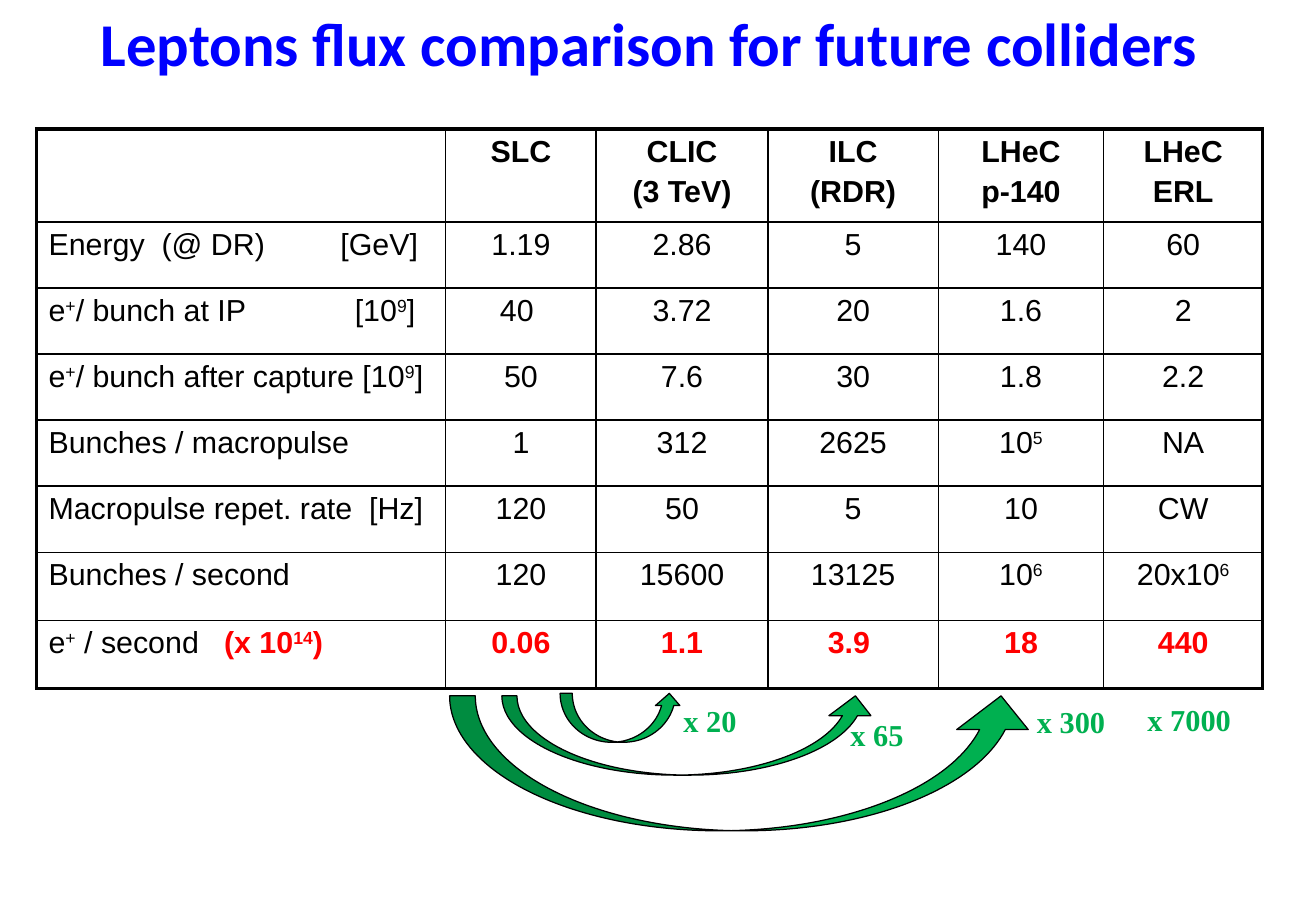
from dataclasses import dataclass
from lxml.etree import SubElement as Sub
from pptx import Presentation
from pptx.dml.color import RGBColor as RGB
from pptx.enum.shapes import MSO_SHAPE as Shape
from pptx.enum.text import MSO_ANCHOR as Anchor, PP_ALIGN as Align
from pptx.oxml.ns import qn
from pptx.util import Pt


@dataclass(frozen=True)
class Theme:
    ink: str = "000000"
    blue: str = "0000FF"
    red: str = "FF0000"
    green: str = "00B050"
    head: int = 36
    body: int = 18
    thin: float = 1
    thick: float = 2.25


THEME = Theme()
TITLE = dict(name="Calibri", size=Pt(THEME.head), bold=True, color=THEME.blue)
PLAIN = dict(name="Arial", size=Pt(THEME.body), bold=False, color=THEME.ink)
BOLD = {**PLAIN, "bold": True}
HOT = {**BOLD, "color": THEME.red}
NOTE = dict(name="Times New Roman", size=Pt(THEME.body), bold=True, color=THEME.green)

WIDTHS = [242.6, 89.2, 101.8, 101, 98, 94.3]
HEIGHTS = [55] + [39.2] * 5 + [40.3] * 2
ROWS = [
    ["", "SLC", "CLIC\n(3 TeV)", "ILC\n(RDR)", "LHeC\np-140", "LHeC\nERL"],
    ["Energy\t(@ DR)\t[GeV]", "1.19", "2.86", "5", "140", "60"],
    ["e^+^/ bunch at IP\t[10^9^]", "40 ", "3.72", "20", "1.6", "2"],
    ["e^+^/ bunch after capture [10^9^]", "50", "7.6", "30", "1.8", "2.2"],
    ["Bunches / macropulse", "1", "312", "2625", "10^5^", "NA"],
    ["Macropulse repet. rate\t[Hz]", "120", "50", "5", "10", "CW"],
    ["Bunches / second", "120", "15600", "13125", "10^6^", "20x10^6^"],
    ["e^+^ / second\t|(x 10^14^)", "|0.06", "|1.1", "|3.9 ", "|18", "|440"],
]
TABS = {1: [67, 173], 2: [181.5], 5: [190], 7: [104]}

GAINS = [
    ("x 20", (398, 412.5, 61, 29), (332, 411, 72, 29), (0.25, 0.5, 0.25)),
    ("x 300", (607.5, 413.5, 65.5, 50), (266.5, 412.5, 348, 80), (0.19, 0.53, 0.25)),
    ("x 7000", (673, 412, 74, 29), None, None),
    ("x 65", (497, 421, 64, 29), (297.5, 412.5, 222, 47), (0.19, 0.53, 0.25)),
]


def style(font, look):
    for key, value in look.items():
        if key == "color":
            font.color.rgb = RGB.from_string(value)
        else:
            setattr(font, key, value)


def write(para, text, look):
    for part, chunk in enumerate(text.split("|")):
        for index, piece in enumerate(chunk.split("^")):
            if piece:
                run = para.add_run()
                run.text = piece
                style(run.font, HOT if part else look)
                if index % 2:
                    run._r.get_or_add_rPr().set("baseline", "30000")


def set_tabs(para, stops):
    tabs = Sub(para._p.get_or_add_pPr(), qn("a:tabLst"))
    for stop in stops:
        Sub(tabs, qn("a:tab"), pos=str(Pt(stop)), algn="l")


def border(cell, row, col):
    props = cell._tc.get_or_add_tcPr()
    sides = {"L": col == 0, "R": col == len(WIDTHS) - 1,
             "T": row == 0, "B": row == len(HEIGHTS) - 1}
    for side, outer in sides.items():
        width = Pt(THEME.thick if outer else THEME.thin)
        line = Sub(props, qn(f"a:ln{side}"), w=str(width))
        Sub(Sub(line, qn("a:solidFill")), qn("a:srgbClr"), val=THEME.ink)


def fill_cell(cell, row, col):
    border(cell, row, col)
    cell.fill.background()
    cell.vertical_anchor = Anchor.TOP
    frame = cell.text_frame
    for index, text in enumerate(ROWS[row][col].split("\n")):
        para = frame.add_paragraph() if index else frame.paragraphs[0]
        para.alignment = Align.CENTER if col else Align.LEFT
        if index:
            para.space_before = Pt(3.5)
        if not col and row in TABS:
            set_tabs(para, TABS[row])
        write(para, text, PLAIN if row else BOLD)


def add_grid(shapes, left, top):
    box = [Pt(v) for v in (left, top, sum(WIDTHS), sum(HEIGHTS))]
    table = shapes.add_table(len(HEIGHTS), len(WIDTHS), *box).table
    table.first_row = table.horz_banding = False
    for col, width in zip(table.columns, WIDTHS):
        col.width = Pt(width)
    for row, height in enumerate(HEIGHTS):
        table.rows[row].height = Pt(height)
        for col in range(len(WIDTHS)):
            fill_cell(table.cell(row, col), row, col)


def add_label(shapes, text, box, look):
    frame = shapes.add_textbox(*map(Pt, box)).text_frame
    frame.word_wrap = True
    write(frame.paragraphs[0], text, look)


def add_arrow(shapes, box, bends):
    arrow = shapes.add_shape(Shape.CURVED_UP_ARROW, *map(Pt, box))
    for index, bend in enumerate(bends):
        arrow.adjustments[index] = bend
    arrow.shadow.inherit = False
    arrow.fill.solid()
    arrow.fill.fore_color.rgb = RGB.from_string(THEME.green)
    arrow.line.color.rgb = RGB.from_string(THEME.ink)
    arrow.line.width = Pt(0)


def add_gain(shapes, text, place, box, bends):
    if box:
        shapes = shapes.add_group_shape().shapes
        add_arrow(shapes, box, bends)
    add_label(shapes, text, place, NOTE)


def main():
    deck = Presentation()
    deck.slide_width, deck.slide_height = Pt(780), Pt(540)
    shapes = deck.slides.add_slide(deck.slide_layouts[6]).shapes
    add_grid(shapes, 21.6, 76.5)
    add_label(shapes, "Leptons flux comparison for future colliders",
              (52.5, 0, 696, 41), TITLE)
    for gain in GAINS:
        add_gain(shapes, *gain)
    deck.save("out.pptx")


if __name__ == "__main__":
    main()
